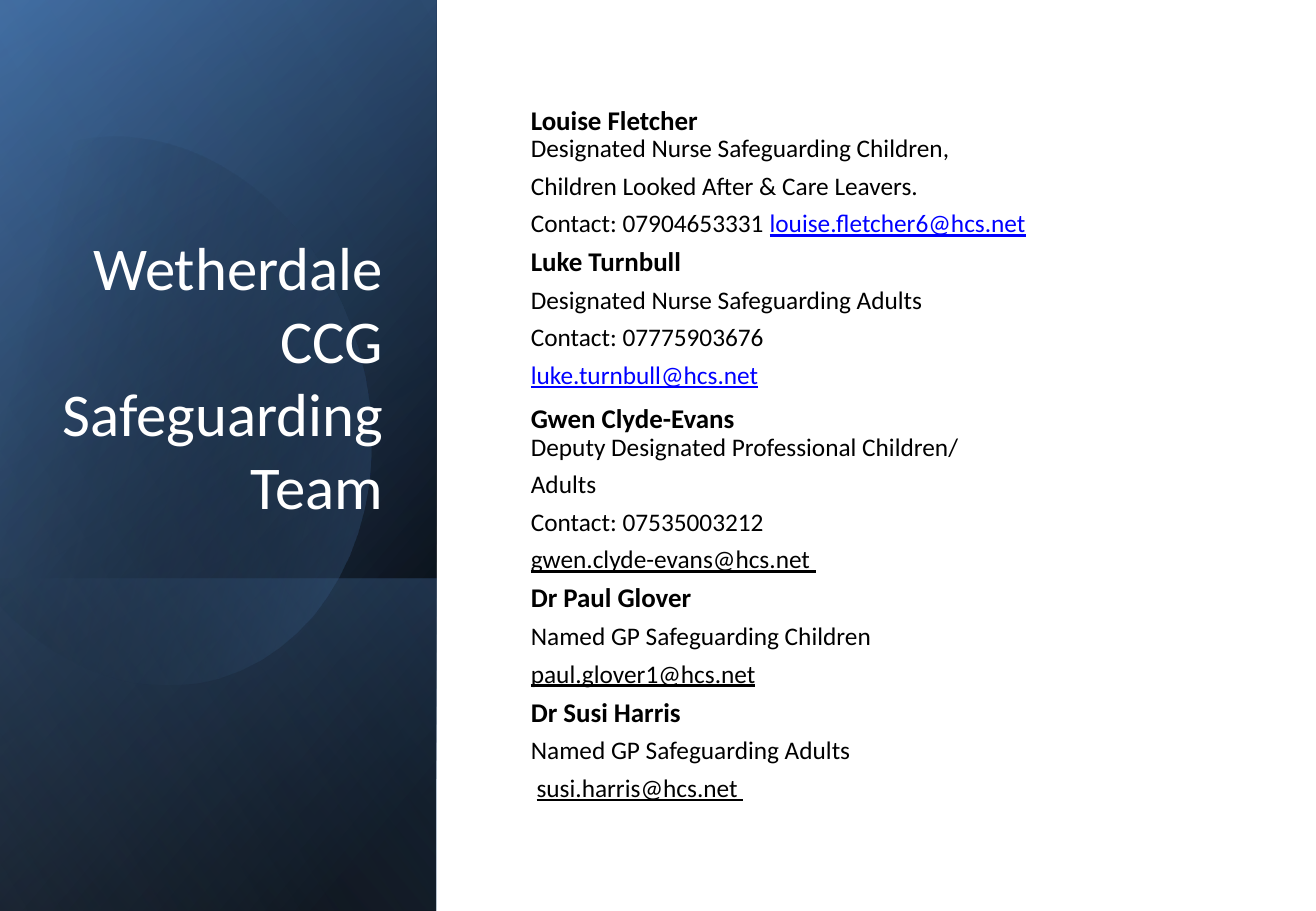
from dataclasses import dataclass
from math import cos, radians, sin

from lxml import etree
from pptx import Presentation, util as u
from pptx.dml.color import RGBColor
from pptx.enum import shapes, text
from pptx.oxml import ns


@dataclass(frozen=True)
class Theme:
    font: str = "Calibri"
    white: str = "FFFFFF"
    black: str = "000000"
    navy: str = "376092"
    blue: str = "4F81BD"
    pale: str = "95B3D7"
    link: str = "0000FF"
    title: float = 36
    name: float = 16
    body: float = 15


T = Theme()
PAGE = (0, 0, 10.83, 7.5)
PANEL = (0, 0, 3.59, 7.5)
FOOT = (0, 4.76, 3.59, 2.74)
TITLE = (0.41, 0.64, 2.84, 3.7)
BODY = (4.27, 0.71, 5.82, 6.07)

# Each contact: name, role and phone lines, text before mail, mail, mail colour, gap above
TEAM = [
    ("Louise Fletcher", ["Designated Nurse Safeguarding Children,",
                         "Children Looked After & Care Leavers."],
     "Contact: 07904653331 ", "louise.fletcher6@hcs.net", T.link, True),
    ("Luke Turnbull", ["Designated Nurse Safeguarding Adults", "Contact: 07775903676"],
     "", "luke.turnbull@hcs.net", T.link, False),
    ("Gwen Clyde-Evans", ["Deputy Designated Professional Children/", "Adults",
                          "Contact: 07535003212"],
     "", "gwen.clyde-evans@hcs.net ", T.black, True),
    ("Dr Paul Glover", ["Named GP Safeguarding Children"],
     "", "paul.glover1@hcs.net", T.black, False),
    ("Dr Susi Harris", ["Named GP Safeguarding Adults"],
     " ", "susi.harris@hcs.net ", T.black, False),
]

# The oval's outline: start point, then cubic curves or straight lines
START = (1.09, 1.13)
EDGES = [
    [(1.9, 1.2), (2.67, 1.88), (2.95, 2.87)],
    [(3.3, 4.08), (2.79, 5.29), (1.8, 5.58)],
    [(1.19, 5.75), (0.53, 5.53), (0.04, 5.03)],
    [(-0.06, 4.92)],
    [(-0.23, 1.68)],
    [(-0.11, 1.56)],
    [(0.07, 1.38), (0.29, 1.26), (0.54, 1.18)],
    [(0.72, 1.13), (0.91, 1.11), START],
]


def inch(box):
    return [u.Inches(v) for v in box]


def plain(shape):
    shape.shadow.inherit = False
    shape.line.fill.background()
    return shape


def blend(shape, stops, angle):
    """Fill with a linear gradient of (position, colour, opacity) stops."""
    shape.fill.background()
    old = shape._element.spPr.find(ns.qn("a:noFill"))
    grad = etree.Element(ns.qn("a:gradFill"), rotWithShape="1")
    group = etree.SubElement(grad, ns.qn("a:gsLst"))
    for pos, tint, alpha in stops:
        stop = etree.SubElement(group, ns.qn("a:gs"), pos=str(pos * 1000))
        color = etree.SubElement(stop, ns.qn("a:srgbClr"), val=tint)
        if alpha < 100:
            etree.SubElement(color, ns.qn("a:alpha"), val=str(alpha * 1000))
    etree.SubElement(grad, ns.qn("a:lin"), ang=str(angle * 60000), scaled="0")
    old.getparent().replace(old, grad)


def block(slide, box):
    return plain(slide.shapes.add_shape(shapes.MSO_SHAPE.RECTANGLE, *inch(box)))


def layer(slide, box, stops, angle):
    """Cover the box with a mirrored rectangle turned a quarter."""
    x, y, w, h = box
    shape = block(slide, (x + (w - h) / 2, y + (h - w) / 2, h, w))
    shape.rotation = 90
    shape._element.spPr.xfrm.set("flipH", "1")
    blend(shape, stops, angle)


def trace(steps=16):
    """Return the oval's outline as points."""
    points = [START]
    for edge in EDGES:
        if len(edge) == 1:
            points += edge
            continue
        a, (b, c, d) = points[-1], edge
        for n in range(1, steps + 1):
            t = n / steps
            s = 1 - t
            points.append(tuple(
                s ** 3 * a[k] + 3 * s * s * t * b[k] + 3 * s * t * t * c[k] + t ** 3 * d[k]
                for k in (0, 1)))
    return points


def oval(slide, center=(1.29, 3.35), turn=343.9):
    """Draw the outline upright, then turn it so its gradient turns too."""
    cx, cy = center
    back = radians(360 - turn)
    points = []
    for x, y in trace():
        dx, dy = x - cx, y - cy
        points.append((u.Inches(cx + dx * cos(back) - dy * sin(back)),
                       u.Inches(cy + dx * sin(back) + dy * cos(back))))
    form = slide.shapes.build_freeform(*points[0], scale=1.0)
    form.add_line_segments(points[1:], close=True)
    shape = plain(form.convert_to_shape())
    shape.rotation = turn
    blend(shape, [(29, T.black, 0), (100, T.blue, 43)], 30)


def panel(slide, box):
    layer(slide, box, [(8, T.black, 100), (100, T.navy, 100)], 50)
    layer(slide, box, [(0, T.black, 0), (99, T.blue, 46)], 30)
    layer(slide, FOOT, [(2, T.blue, 29), (100, T.black, 30)], 130)
    oval(slide)
    layer(slide, box, [(0, T.black, 0), (99, T.pale, 11)], 120)


def frame(slide, box, anchor):
    body = slide.shapes.add_textbox(*inch(box)).text_frame
    body.word_wrap = True
    body.vertical_anchor = anchor
    return body


def write(para, words, size, color, **form):
    run = para.add_run()
    run.text = words
    run.font.color.rgb = RGBColor.from_string(color)
    for key, value in {"name": T.font, "size": u.Pt(size), **form}.items():
        setattr(run.font, key, value)


def title(slide, box):
    para = frame(slide, box, text.MSO_ANCHOR.BOTTOM).paragraphs[0]
    para.alignment = text.PP_ALIGN.RIGHT
    write(para, "Wetherdale CCG Safeguarding Team", T.title, T.white)


def team(slide, box):
    body = frame(slide, box, text.MSO_ANCHOR.MIDDLE)
    spare = [body.paragraphs[0]]

    def line(before=0, after=6):
        para = spare.pop() if spare else body.add_paragraph()
        form = {"line_spacing": 0.9, "space_before": u.Pt(before), "space_after": u.Pt(after)}
        for key, value in form.items():
            setattr(para, key, value)
        return para

    for name, facts, lead, mail, color, gap in TEAM:
        head = line(3.2, 0) if gap else line()
        write(head, name, T.name, T.black, bold=True)
        for fact in facts:
            write(line(), fact, T.body, T.black)
        para = line()
        if lead:
            write(para, lead, T.body, T.black)
        write(para, mail, T.body, color, underline=True)


def main():
    deck = Presentation()
    deck.slide_width, deck.slide_height = inch(PAGE[2:])
    slide = deck.slides.add_slide(deck.slide_layouts[6])
    page = block(slide, PAGE)
    page.fill.solid()
    page.fill.fore_color.rgb = RGBColor.from_string(T.white)
    panel(slide, PANEL)
    title(slide, TITLE)
    team(slide, BODY)
    deck.save("out.pptx")


if __name__ == "__main__":
    main()
